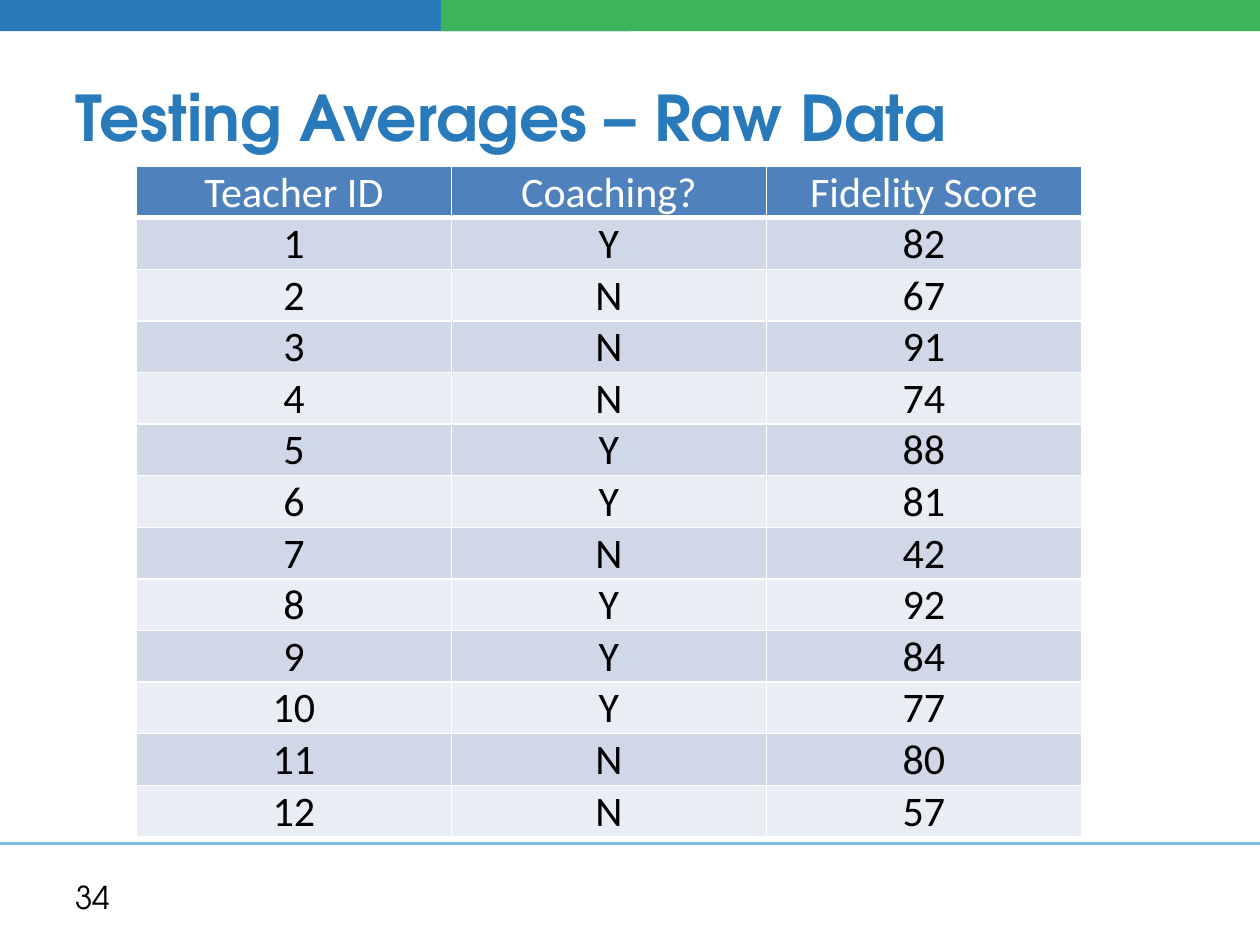
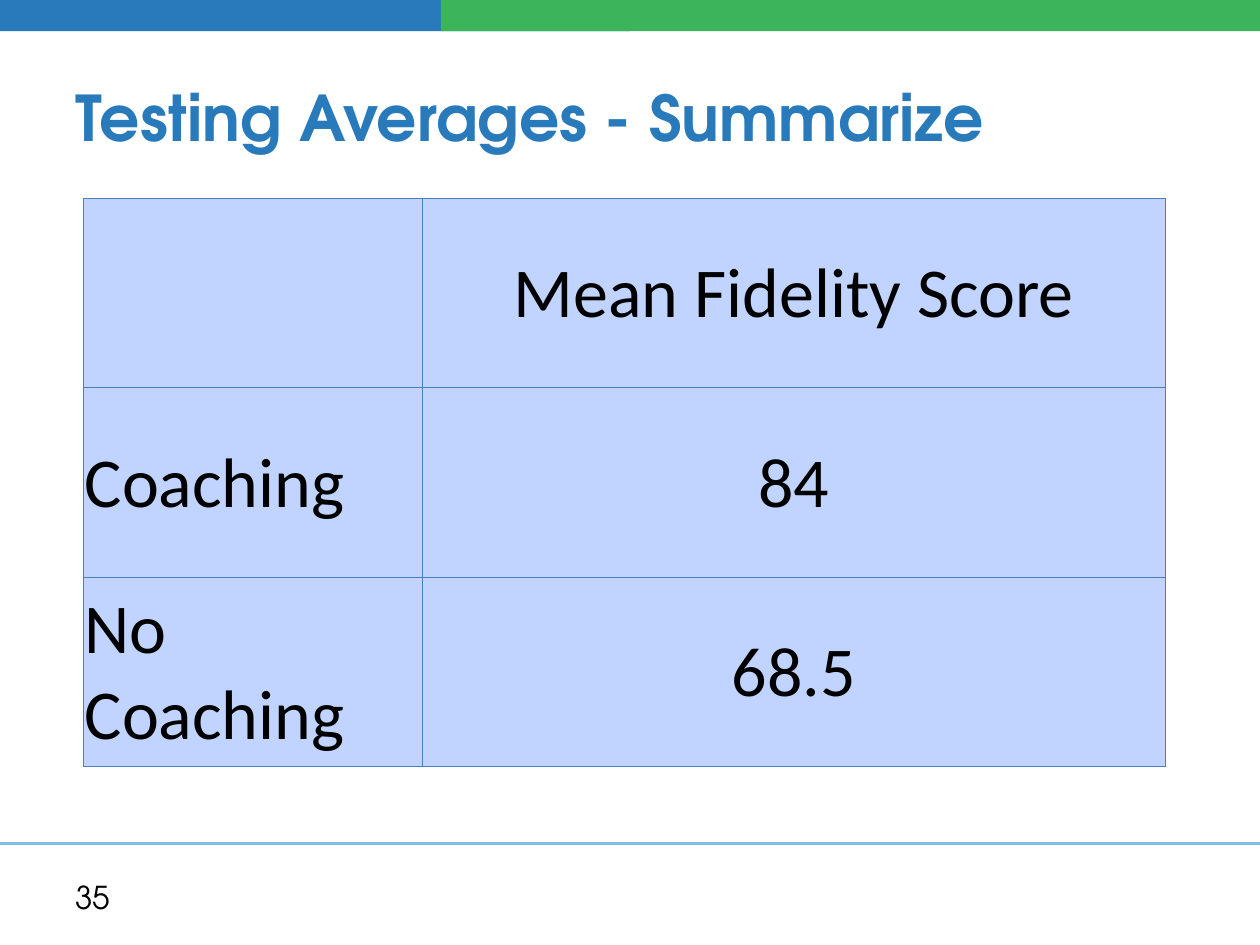
from dataclasses import dataclass

from lxml import etree
from pptx import Presentation
from pptx import util as u
from pptx.dml.color import RGBColor
from pptx.enum import shapes, text
from pptx.oxml import ns

# Content
RAW_DATA = {
    "title": "Testing Averages – Raw Data",
    "number": 34,
    "header": ("Teacher ID", "Coaching?", "Fidelity Score"),
    "scores": [("Y", 82), ("N", 67), ("N", 91), ("N", 74), ("Y", 88), ("Y", 81),
               ("N", 42), ("Y", 92), ("Y", 84), ("Y", 77), ("N", 80), ("N", 57)],
}
SUMMARY = {
    "title": "Testing Averages - Summarize",
    "number": 35,
    "rows": [("", "Mean Fidelity Score"), ("Coaching", 84), ("No Coaching", 68.5)],
}


# Theme
@dataclass(frozen=True)
class Theme:
    blue: str = "297ABB"
    green: str = "3CB45C"
    rule: str = "7FBCE7"
    black: str = "000000"
    white: str = "FFFFFF"
    header: str = "4F81BD"
    stripes: tuple = ("D0D8E8", "E9EDF4")
    summary: str = "C0D4FF"
    grid: str = "4B7EBC"
    heading_font: str = "TeX Gyre Adventor"
    table_font: str = "Calibri"
    title_size: int = 36
    number_size: int = 18
    raw_size: int = 24
    summary_size: int = 40


THEME = Theme()
PAGE_WIDTH, PAGE_HEIGHT = u.Cm(25.4), u.Cm(19.05)
MARGIN = u.Cm(1.27)
BAND_TOP, BAND_HEIGHT = u.Cm(-3.18), u.Cm(3.81)
GREEN_LEFT = u.Cm(8.89)
RULE_TOP = u.Cm(17)


# Helpers
def style_text(frame, font, size, color, bold=False, align=text.PP_ALIGN.LEFT):
    for para in frame.paragraphs:
        para.alignment = align
        for span in para.runs:
            span.font.name = font
            span.font.size = u.Pt(size)
            span.font.bold = bold
            span.font.color.rgb = RGBColor.from_string(color)


def set_border(cell, side, color, points):
    properties = cell._tc.get_or_add_tcPr()
    line = etree.SubElement(properties, ns.qn(f"a:ln{side}"), w=str(u.Pt(points)))
    fill = etree.SubElement(line, ns.qn("a:solidFill"))
    etree.SubElement(fill, ns.qn("a:srgbClr"), val=color)


def format_cell(cell, value, fill, color, size, anchor, align, borders, border_color):
    for side, points in zip("LRTB", borders):
        set_border(cell, side, border_color, points)
    cell.fill.solid()
    cell.fill.fore_color.rgb = RGBColor.from_string(fill)
    cell.margin_left = cell.margin_right = cell.margin_top = u.Cm(0.02)
    cell.margin_bottom = 0
    cell.vertical_anchor = anchor
    cell.text_frame.text = str(value)
    style_text(cell.text_frame, THEME.table_font, size, color, align=align)


def add_grid(page, left, top, widths, row_height, row_count):
    table = page.shapes.add_table(row_count, len(widths), left, top,
                                  sum(widths), row_height * row_count).table
    table.first_row = table.horz_banding = False
    for column, width in zip(table.columns, widths):
        column.width = width
    for row in table.rows:
        row.height = row_height
    return table


# Shared page: bands, footer rule, title and page number
def add_page(deck, content):
    page = deck.slides.add_slide(deck.slide_layouts[5])
    # The bands bleed over the top edge, and green overlaps blue
    bands = ((0, PAGE_WIDTH // 2, THEME.blue), (GREEN_LEFT, PAGE_WIDTH, THEME.green))
    for left, right, color in bands:
        band = page.shapes.add_shape(shapes.MSO_SHAPE.RECTANGLE, left, BAND_TOP,
                                     right - left, BAND_HEIGHT)
        band.shadow.inherit = False
        band.fill.solid()
        band.fill.fore_color.rgb = RGBColor.from_string(color)
        band.line.fill.background()

    rule = page.shapes.add_connector(shapes.MSO_CONNECTOR.STRAIGHT,
                                     0, RULE_TOP, PAGE_WIDTH, RULE_TOP)
    rule.line.color.rgb = RGBColor.from_string(THEME.rule)
    rule.line.width = u.Pt(1.5)
    etree.SubElement(rule._element.spPr, ns.qn("a:effectLst"))

    title = page.shapes.title
    title.left, title.top = MARGIN, u.Cm(0.76)
    title.width, title.height = PAGE_WIDTH - 2 * MARGIN, u.Cm(3.18)
    title.text_frame.text = content["title"]
    title.text_frame.auto_size = text.MSO_AUTO_SIZE.NONE
    title.text_frame.vertical_anchor = text.MSO_ANCHOR.MIDDLE
    style_text(title.text_frame, THEME.heading_font, THEME.title_size, THEME.blue, bold=True)

    number = page.shapes.add_textbox(MARGIN, u.Cm(17.58), u.Cm(5.92), u.Cm(1.02))
    number.text_frame.word_wrap = True
    number.text_frame.vertical_anchor = text.MSO_ANCHOR.MIDDLE
    number.text_frame.text = str(content["number"])
    style_text(number.text_frame, THEME.heading_font, THEME.number_size, THEME.black)
    return page


# Raw data: striped rows numbered by teacher
def add_raw_data(deck):
    page = add_page(deck, RAW_DATA)
    rows = [RAW_DATA["header"]]
    rows += [(teacher, *score) for teacher, score in enumerate(RAW_DATA["scores"], 1)]
    table = add_grid(page, u.Cm(2.75), u.Cm(3.35), [u.Cm(6.35)] * 3, u.Cm(1.04), len(rows))
    for r, row in enumerate(rows):
        is_header = r == 0
        fill = THEME.header if is_header else THEME.stripes[(r - 1) % 2]
        color = THEME.white if is_header else THEME.black
        borders = (1, 1, 3 if r == 1 else 1, 3 if is_header else 1)
        for c, value in enumerate(row):
            format_cell(table.cell(r, c), value, fill, color, THEME.raw_size,
                        text.MSO_ANCHOR.BOTTOM, text.PP_ALIGN.CENTER,
                        borders, THEME.white)


# Summary: mean score by coaching group
def add_summary(deck):
    page = add_page(deck, SUMMARY)
    rows = SUMMARY["rows"]
    table = add_grid(page, u.Cm(1.69), u.Cm(4), [u.Cm(6.82), u.Cm(14.98)],
                     u.Cm(3.82), len(rows))
    for r, row in enumerate(rows):
        for c, value in enumerate(row):
            align = text.PP_ALIGN.CENTER if c else text.PP_ALIGN.LEFT
            format_cell(table.cell(r, c), value, THEME.summary, THEME.black,
                        THEME.summary_size, text.MSO_ANCHOR.MIDDLE, align,
                        (0.75,) * 4, THEME.grid)


def main():
    deck = Presentation()
    deck.slide_width, deck.slide_height = PAGE_WIDTH, PAGE_HEIGHT
    add_raw_data(deck)
    add_summary(deck)
    deck.save("out.pptx")


if __name__ == "__main__":
    main()
